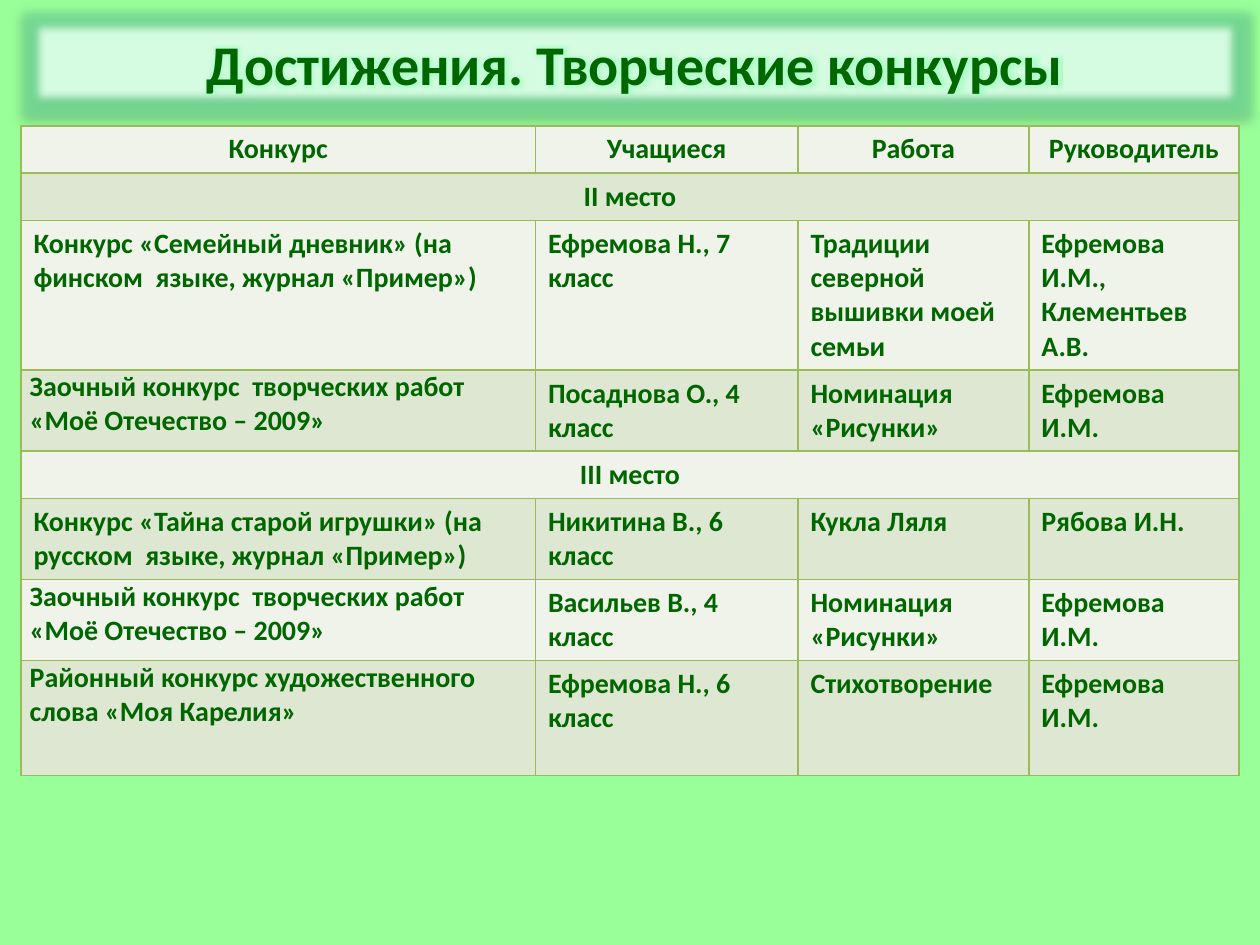
import pptx
import pptx.dml.color
import pptx.enum.text
import pptx.oxml
import pptx.oxml.ns
import pptx.util

Pt = pptx.util.Pt
ALIGN = pptx.enum.text.PP_ALIGN
ANCHOR = pptx.enum.text.MSO_ANCHOR
NAMESPACE = pptx.oxml.ns.nsdecls("a")

COLORS = {
    "background": "99FF99",
    "text": "006600",
    "title_fill": "D5FBE1",
    "title_glow": "6FDCA0",
    "text_glow": "99FFBB",
    "border": "9BBB59",
    "light_row": "EFF3EA",
    "dark_row": "DEE7D1",
}
FONT = "Calibri"

COLUMN_WIDTHS = [294, 150, 132, 120]
PATRIOTIC_CONTEST = "Заочный конкурс  творческих работ «Моё Отечество – 2009»"
ROWS = [
    (27, ["Конкурс", "Учащиеся", "Работа", "Руководитель"]),
    (27, ["II место"]),
    (85.5, ["Конкурс «Семейный дневник» (на финском  языке, журнал «Пример»)",
            "Ефремова Н., 7 класс", "Традиции северной вышивки моей семьи",
            "Ефремова И.М., Клементьев А.В."]),
    (46.3, [PATRIOTIC_CONTEST, "Посаднова О., 4 класс",
            "Номинация «Рисунки»", "Ефремова И.М."]),
    (27, ["III место"]),
    (46.3, ["Конкурс «Тайна старой игрушки» (на русском  языке, журнал «Пример»)",
            "Никитина В., 6 класс", "Кукла Ляля", "Рябова И.Н."]),
    (46.3, [PATRIOTIC_CONTEST, "Васильев В., 4 класс",
            "Номинация «Рисунки»", "Ефремова И.М."]),
    (65.7, ["Районный конкурс художественного слова «Моя Карелия»",
            "Ефремова Н., 6 класс", "Стихотворение", "Ефремова И.М."]),
]
TIGHT_ROWS = {3, 6, 7}


def rgb(name):
    return pptx.dml.color.RGBColor.from_string(COLORS[name])


def paint(fill, name):
    fill.solid()
    fill.fore_color.rgb = rgb(name)


def write(text_frame, text, size, alignment):
    paragraph = text_frame.paragraphs[0]
    paragraph.alignment = alignment
    run = paragraph.add_run()
    run.text = text
    run.font.name = FONT
    run.font.size = Pt(size)
    run.font.bold = True
    run.font.color.rgb = rgb("text")
    return run


def glow(name, radius, opacity):
    return (f'<a:glow rad="{Pt(radius)}"><a:srgbClr val="{COLORS[name]}">'
            f'<a:alpha val="{opacity * 1000}"/></a:srgbClr></a:glow>')


def effects(*parts):
    return pptx.oxml.parse_xml(
        f'<a:effectLst {NAMESPACE}>{"".join(parts)}</a:effectLst>')


def add_title(slide, left, top, width, height):
    title = slide.shapes.title
    title.left, title.top = Pt(left), Pt(top)
    title.width, title.height = Pt(width), Pt(height)
    paint(title.fill, "title_fill")
    title.line.fill.background()
    shadow = (f'<a:outerShdw blurRad="{Pt(3.5)}" dist="{Pt(2.2)}" dir="5400000">'
              '<a:srgbClr val="000000"><a:alpha val="32000"/></a:srgbClr>'
              '</a:outerShdw>')
    soft_edge = f'<a:softEdge rad="{Pt(5)}"/>'
    title.element.spPr.append(
        effects(glow("title_glow", 11, 60), shadow, soft_edge))
    title.text_frame.word_wrap = True
    title.text_frame.auto_size = pptx.enum.text.MSO_AUTO_SIZE.NONE
    title.text_frame.vertical_anchor = ANCHOR.MIDDLE
    run = write(title.text_frame, "Достижения. Творческие конкурсы", 32,
                ALIGN.CENTER)
    run.font.fill._xPr.find(pptx.oxml.ns.qn("a:solidFill")).addnext(
        effects(glow("text_glow", 5, 60)))


def add_borders(cell):
    properties = cell._tc.get_or_add_tcPr()
    for position, side in enumerate(("lnL", "lnR", "lnT", "lnB")):
        properties.insert(position, pptx.oxml.parse_xml(
            f'<a:{side} {NAMESPACE} w="{Pt(1)}"><a:solidFill>'
            f'<a:srgbClr val="{COLORS["border"]}"/></a:solidFill></a:{side}>'))


def add_results_table(slide, left, top, width, height):
    table = slide.shapes.add_table(
        len(ROWS), len(COLUMN_WIDTHS),
        Pt(left), Pt(top), Pt(width), Pt(height)).table
    for column, column_width in zip(table.columns, COLUMN_WIDTHS):
        column.width = Pt(column_width)
    for row_index, (row_height, texts) in enumerate(ROWS):
        table.rows[row_index].height = Pt(row_height)
        is_section = len(texts) == 1
        alignment = ALIGN.CENTER if row_index == 0 or is_section else ALIGN.LEFT
        for column_index in range(len(COLUMN_WIDTHS)):
            cell = table.cell(row_index, column_index)
            paint(cell.fill, "dark_row" if row_index % 2 else "light_row")
            add_borders(cell)
            if column_index < len(texts):
                write(cell.text_frame, texts[column_index], 16, alignment)
        if is_section:
            table.cell(row_index, 0).merge(
                table.cell(row_index, len(COLUMN_WIDTHS) - 1))
        if row_index in TIGHT_ROWS:
            contest = table.cell(row_index, 0)
            contest.margin_left = contest.margin_right = Pt(5)
            contest.margin_top = contest.margin_bottom = Pt(0)


def main():
    presentation = pptx.Presentation()
    presentation.slide_width, presentation.slide_height = Pt(720), Pt(540)
    slide = presentation.slides.add_slide(
        presentation.slide_layouts.get_by_name("Title Only"))
    paint(slide.background.fill, "background")
    add_title(slide, 18, 12, 690, 48)
    add_results_table(slide, 12, 72, sum(COLUMN_WIDTHS),
                      sum(row_height for row_height, texts in ROWS))
    presentation.save("out.pptx")


if __name__ == "__main__":
    main()
